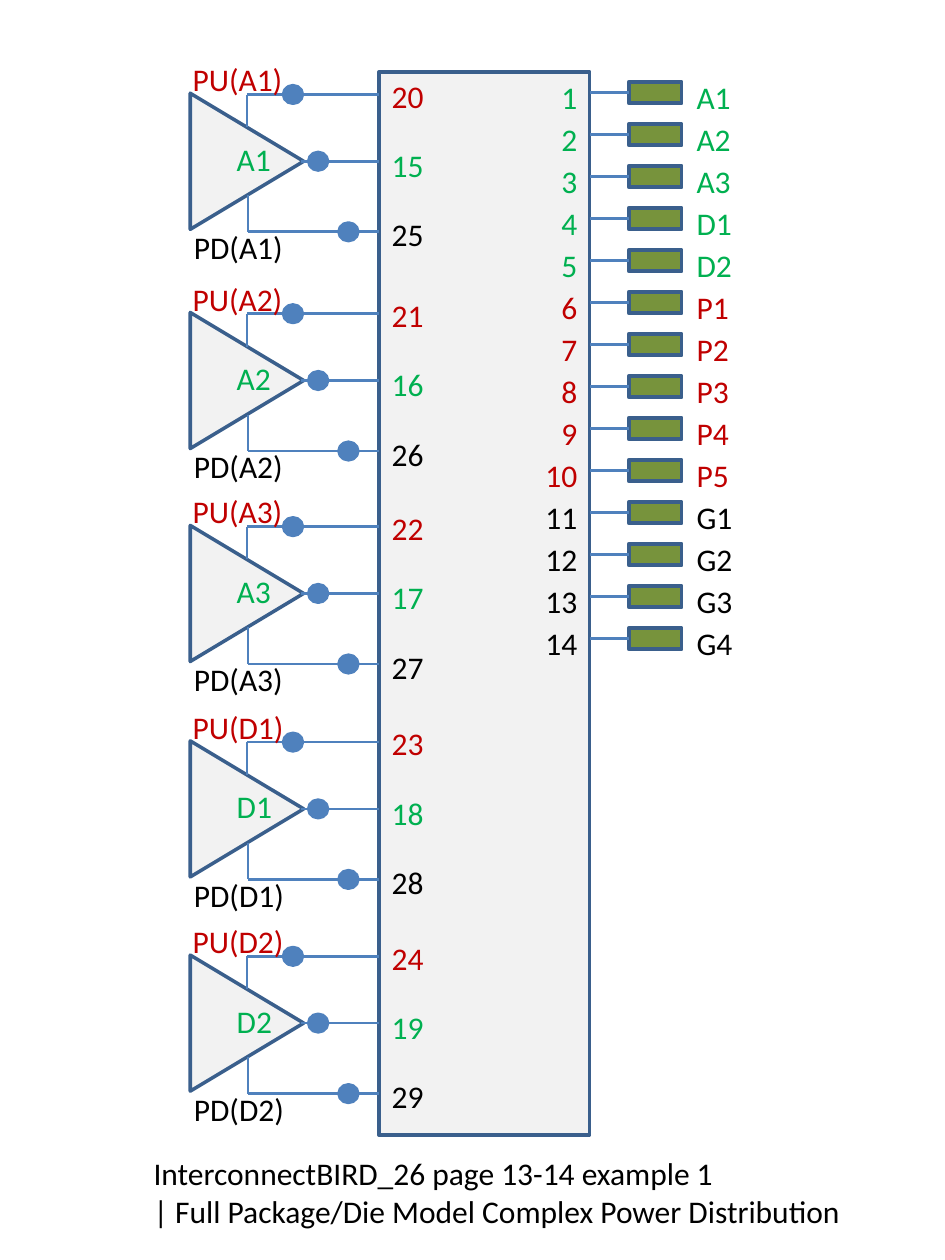
import pptx
import pptx.util
import pptx.dml.color
import pptx.enum.shapes
import pptx.enum.text
import pptx.oxml

Inches = pptx.util.Inches
Pt = pptx.util.Pt
RGBColor = pptx.dml.color.RGBColor
Shape = pptx.enum.shapes.MSO_SHAPE
Align = pptx.enum.text.PP_ALIGN

BLUE = RGBColor(0x4F, 0x81, 0xBD)
EDGE = RGBColor(0x3A, 0x5F, 0x8C)
GRAY = RGBColor(0xF2, 0xF2, 0xF2)
OLIVE = RGBColor(0x77, 0x93, 0x3C)
GREEN = RGBColor(0x00, 0xB0, 0x50)
RED = RGBColor(0xC0, 0x00, 0x00)
BLACK = RGBColor(0x00, 0x00, 0x00)

PINS = [
    ("A1", GREEN), ("A2", GREEN), ("A3", GREEN), ("D1", GREEN), ("D2", GREEN),
    ("P1", RED), ("P2", RED), ("P3", RED), ("P4", RED), ("P5", RED),
    ("G1", BLACK), ("G2", BLACK), ("G3", BLACK), ("G4", BLACK),
]
# Name of each buffer and its drop below the first one
BUFFERS = [("A1", 0), ("A2", 1.74), ("A3", 3.43), ("D1", 5.14), ("D2", 6.84)]
PITCH = 1 / 3
LEFT, RIGHT = 3.01, 4.68


def add_solid(shapes, kind, x, y, w, h, fill, edge):
    solid = shapes.add_shape(kind, Inches(x), Inches(y), Inches(w), Inches(h))
    solid.shadow.inherit = False
    solid.fill.solid()
    solid.fill.fore_color.rgb = fill
    solid.line.color.rgb = edge
    solid.line.width = Pt(2)
    return solid


def add_dot(shapes, x, y):
    add_solid(shapes, Shape.OVAL, x, y, 0.15, 0.14, BLUE, BLUE)


def add_wire(shapes, x1, y1, x2, y2):
    wire = shapes.add_connector(
        pptx.enum.shapes.MSO_CONNECTOR.STRAIGHT,
        Inches(x1), Inches(y1), Inches(x2), Inches(y2))
    wire.line.color.rgb = BLUE
    wire.line.width = Pt(1.5)
    props = wire._element.spPr
    props.append(pptx.oxml.parse_xml(
        '<a:effectLst xmlns:a='
        '"http://schemas.openxmlformats.org/drawingml/2006/main"/>'))
    return wire


def add_text(shapes, x, y, w, h, lines, gap=0, align=Align.LEFT, wrap=False):
    """Add a text box; lines holds pairs of wording and colour."""
    box = shapes.add_textbox(Inches(x), Inches(y), Inches(w), Inches(h))
    frame = box.text_frame
    frame.text = "\n".join(words for words, _ in lines)
    frame.word_wrap = wrap
    frame.auto_size = pptx.enum.text.MSO_AUTO_SIZE.SHAPE_TO_FIT_TEXT
    for para, (_, color) in zip(frame.paragraphs, lines):
        para.alignment = align
        para.space_after = Pt(gap)
        font = para.runs[0].font
        font.name = "Calibri"
        font.size = Pt(18)
        font.color.rgb = color


def add_pins(shapes):
    """Add the pads on the right, their leads and both label columns."""
    for i in range(len(PINS)):
        y = 0.65 + i * PITCH
        pad = add_solid(shapes, Shape.RECTANGLE, 4.99, y, 0.42, 0.17,
                        OLIVE, EDGE)
        lead = add_wire(shapes, RIGHT, y + 0.085, 4.99, y + 0.085)
        lead.end_connect(pad, 1)
    nums = [(str(i), color) for i, (_, color) in enumerate(PINS, 1)]
    add_text(shapes, 4.18, 0.57, 0.5, 4.71, nums, 2.4, Align.RIGHT, True)
    add_text(shapes, 5.43, 0.57, 0.5, 4.71, PINS, 2.4, wrap=True)


def add_buffer(shapes, name, dy):
    """Add one grouped driver with its supply and output stubs."""
    parts = shapes.add_group_shape().shapes
    body = add_solid(parts, Shape.ISOSCELES_TRIANGLE, 1.42, 0.83 + dy,
                     1.08, 0.9, GRAY, EDGE)
    body.rotation = 90
    for x1, y1, x2, y2 in [
        (1.96, 0.75, 1.96, 1.01), (1.96, 0.75, 2.24, 0.75),
        (1.97, 1.55, 1.97, 1.84), (1.97, 1.84, 2.69, 1.84),
        (2.39, 1.28, 2.51, 1.28),
    ]:
        add_wire(parts, x1, y1 + dy, x2, y2 + dy)
    for x, y in [(2.25, 0.68), (2.45, 1.21), (2.69, 1.77)]:
        add_dot(parts, x, y + dy)
    for x, y, w, words, color in [
        (1.43, 0.43, 0.92, f"PU({name})", RED),
        (1.44, 1.76, 0.92, f"PD({name})", BLACK),
        (1.78, 1.06, 0.48, name, GREEN),
    ]:
        add_text(parts, x, y + dy, w, 0.4, [(words, color)])


def add_ports(shapes, i, dy):
    """Add the three block terminals of a buffer and the wires to them."""
    for x, y in [(2.4, 0.75), (2.6, 1.28), (2.51, 1.84)]:
        add_wire(shapes, x, y + dy, LEFT, y + dy)
    ports = [(str(20 + i), RED), (str(15 + i), GREEN), (str(25 + i), BLACK)]
    add_text(shapes, LEFT, 0.56 + dy, 0.46, 1.51, ports, 18)


def main():
    deck = pptx.Presentation()
    deck.slide_width = Inches(7.5)
    deck.slide_height = Inches(10)
    shapes = deck.slides.add_slide(deck.slide_layouts[6]).shapes
    add_solid(shapes, Shape.RECTANGLE, LEFT, 0.57, RIGHT - LEFT, 8.44,
              GRAY, EDGE)
    add_pins(shapes)
    for i, (name, dy) in enumerate(BUFFERS):
        add_ports(shapes, i, dy)
        add_buffer(shapes, name, dy)
    add_text(shapes, 1.12, 9.11, 5.71, 0.71, [
        ("InterconnectBIRD_26 page 13-14 example 1", BLACK),
        ("| Full Package/Die Model Complex Power Distribution", BLACK),
    ])
    deck.save("out.pptx")


if __name__ == "__main__":
    main()
